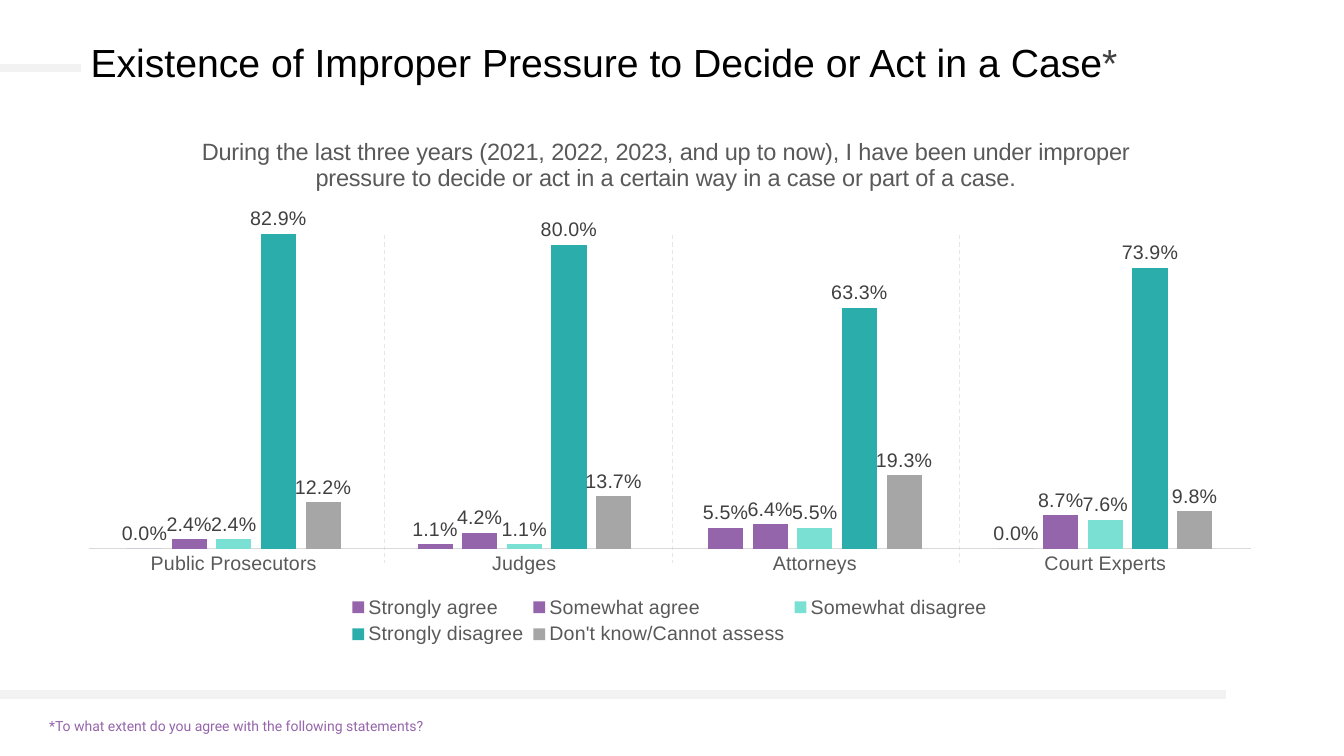
from lxml import etree
from pptx import Presentation
from pptx.chart.data import CategoryChartData
from pptx.dml.color import RGBColor
from pptx.enum.chart import XL_CHART_TYPE, XL_LABEL_POSITION, XL_LEGEND_POSITION, XL_TICK_MARK
from pptx.enum.dml import MSO_LINE
from pptx.enum.shapes import MSO_CONNECTOR
from pptx.enum.text import MSO_ANCHOR
from pptx.oxml.ns import qn
from pptx.util import Pt

COLUMN = XL_CHART_TYPE.COLUMN_CLUSTERED
ABOVE = XL_LABEL_POSITION.OUTSIDE_END
BOTTOM = XL_LEGEND_POSITION.BOTTOM
NO_TICK = XL_TICK_MARK.NONE
DASH = MSO_LINE.DASH
STRAIGHT = MSO_CONNECTOR.STRAIGHT
MIDDLE, TOP = MSO_ANCHOR.MIDDLE, MSO_ANCHOR.TOP

TITLE = "Existence of Improper Pressure to Decide or Act in a Case"
NOTE = "*To what extent do you agree with the following statements?"
ASK = ("During the last three years (2021, 2022, 2023, and up to now), "
       "I have been under improper pressure to decide or act in a certain way "
       "in a case or part of a case.")
GROUPS = ["Public Prosecutors", "Judges", "Attorneys", "Court Experts"]
REPLIES = [
    ("Strongly agree", "9565AB", (0, 0.011, 0.055, 0)),
    ("Somewhat agree", "9565AB", (0.024, 0.042, 0.064, 0.087)),
    ("Somewhat disagree", "7AE0D4", (0.024, 0.011, 0.055, 0.076)),
    ("Strongly disagree", "2BAEAB", (0.829, 0.8, 0.633, 0.739)),
    ("Don't know/Cannot assess", "A6A6A6", (0.122, 0.137, 0.193, 0.098)),
]
THEME = {
    "title": ("Arial", 28, "000000"),
    "star": ("Arial", 28, "404040"),
    "note": ("Roboto", 10, "9565AB"),
    "ask": ("Arial", 16.8, "595959"),
    "axis": ("Arial", 14, "595959"),
    "value": ("Arial", 14, "404040"),
    "band": "F2F2F2",
    "split": "E7E6E6",
    "base": "D9D9D9",
}
PERCENT = "0.0%"


def assign(item, values):
    for name, value in values.items():
        setattr(item, name, value)


def style(font, key):
    face, size, color = THEME[key]
    assign(font, {"name": face, "size": Pt(size), "bold": False})
    font.color.rgb = RGBColor.from_string(color)


def rule(slide, ends, key, width, dash=None):
    line = slide.shapes.add_connector(STRAIGHT, *map(Pt, ends))
    etree.SubElement(line._element.spPr, qn("a:effectLst"))
    line.line.color.rgb = RGBColor.from_string(THEME[key])
    assign(line.line, {"width": Pt(width), "dash_style": dash})


def write(slide, area, parts, anchor, space):
    frame = slide.shapes.add_textbox(*map(Pt, area)).text_frame
    assign(frame, {"word_wrap": True, "vertical_anchor": anchor})
    para = frame.paragraphs[0]
    para.line_spacing = space
    for text, key in parts:
        run = para.add_run()
        run.text = text
        style(run.font, key)


def place(node, index, values):
    for old in node.findall(qn("c:layout")):
        node.remove(old)
    layout = etree.Element(qn("c:layout"))
    node.insert(index, layout)
    manual = etree.SubElement(layout, qn("c:manualLayout"))
    for name, value in values.items():
        etree.SubElement(manual, qn("c:" + name)).set("val", str(value))


def plot(slide, area):
    data = CategoryChartData(number_format=PERCENT)
    data.categories = GROUPS
    for name, _, values in REPLIES:
        data.add_series(name, values)
    chart = slide.shapes.add_chart(COLUMN, *map(Pt, area), data).chart
    style(chart.font, "axis")
    assign(chart, {"has_title": True, "has_legend": True})

    frame = chart.chart_title.text_frame
    frame.text = ASK
    style(frame.paragraphs[0].runs[0].font, "ask")
    assign(chart.legend, {"position": BOTTOM, "include_in_layout": False})
    style(chart.legend.font, "axis")

    assign(chart.value_axis, {"visible": False, "has_major_gridlines": False,
                              "minimum_scale": 0, "maximum_scale": 0.9})
    axis = chart.category_axis
    assign(axis, {"major_tick_mark": NO_TICK, "minor_tick_mark": NO_TICK})
    style(axis.tick_labels.font, "axis")
    axis.format.line.color.rgb = RGBColor.from_string(THEME["base"])
    axis.format.line.width = Pt(0.75)

    bars = chart.plots[0]
    assign(bars, {"gap_width": 219, "overlap": -27, "vary_by_categories": False})
    for series, (_, color, _) in zip(bars.series, REPLIES):
        series.invert_if_negative = False
        series.format.fill.solid()
        series.format.fill.fore_color.rgb = RGBColor.from_string(color)
        labels = series.data_labels
        assign(labels, {"show_value": True, "position": ABOVE,
                        "number_format": PERCENT, "number_format_is_linked": False})
        style(labels.font, "value")

    edge = {"xMode": "edge", "yMode": "edge"}
    place(chart.chart_title._element, 1, {**edge, "x": 0.11, "y": 0.03})
    place(chart.legend._element, 1, {**edge, "x": 0.23, "y": 0.89, "w": 0.54, "h": 0.11})
    place(chart._chartSpace.chart.plotArea, 0,
          {"layoutTarget": "inner", **edge, "x": 0.02, "y": 0.17, "w": 0.96, "h": 0.64})


def main():
    deck = Presentation()
    assign(deck, {"slide_width": Pt(960), "slide_height": Pt(540)})
    slide = deck.slides.add_slide(deck.slide_layouts[6])
    rule(slide, (0, 48.5, 57.6, 48.5), "band", 6)
    write(slide, (57.6, 14.4, 875.5, 63.4), [(TITLE, "title"), ("*", "star")], MIDDLE, 0.9)
    rule(slide, (0, 496, 876, 496), "band", 6)
    write(slide, (28, 509, 820, 19.4), [(NOTE, "note")], TOP, 1)
    for i in range(len(GROUPS) - 1):
        x = 275 + 205.2 * i
        rule(slide, (x, 168, x, 402), "split", 0.75, DASH)
    plot(slide, (46, 82.8, 864.7, 381.6))
    deck.save("out.pptx")


if __name__ == "__main__":
    main()
